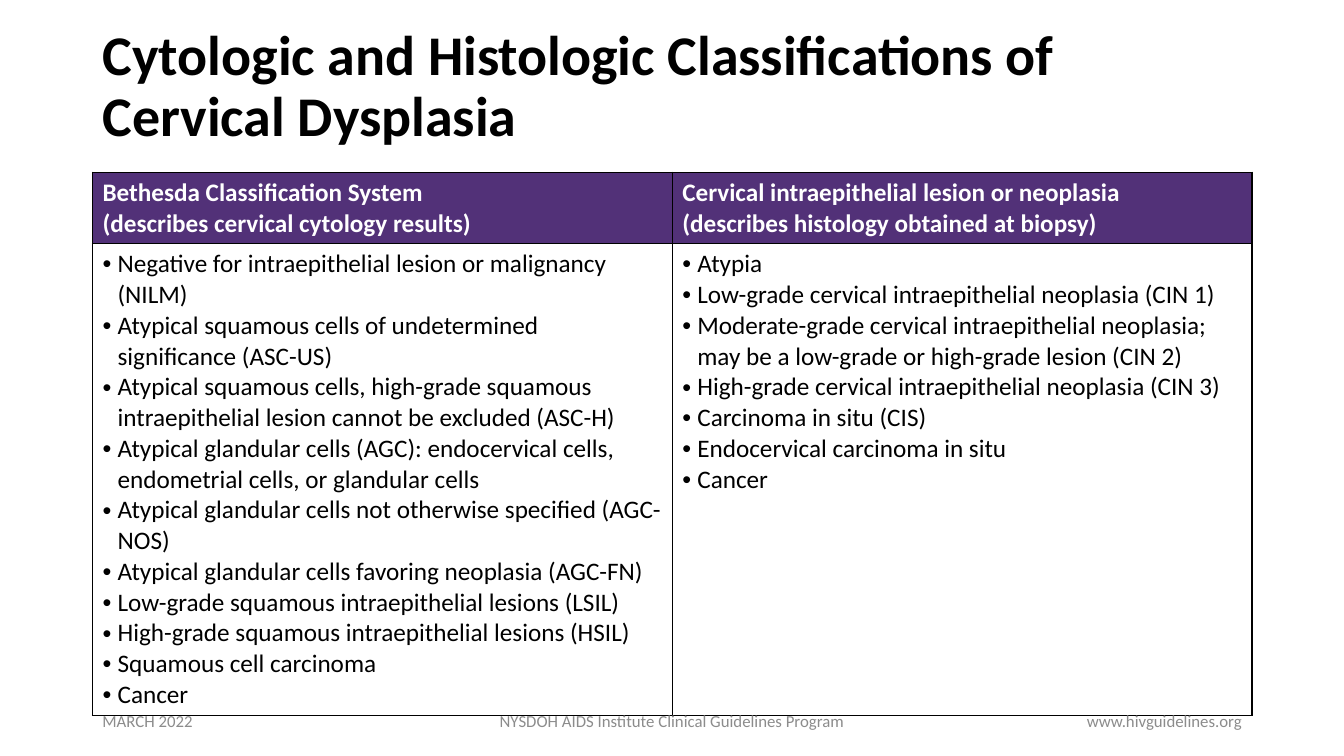
import pptx
import pptx.util
import pptx.dml.color
import pptx.enum.text
import pptx.oxml.ns
from lxml import etree

Cm, Pt = pptx.util.Cm, pptx.util.Pt
RGBColor = pptx.dml.color.RGBColor
ALIGN = pptx.enum.text.PP_ALIGN
MIDDLE = pptx.enum.text.MSO_ANCHOR.MIDDLE

FONT = "Calibri"
BLACK = RGBColor(0, 0, 0)
WHITE = RGBColor(255, 255, 255)
PURPLE = RGBColor(0x52, 0x31, 0x78)
GREY = RGBColor(0x8C, 0x8C, 0x8C)
LEFT = Cm(2.33)

TITLE = "Cytologic and Histologic Classifications of Cervical Dysplasia"
COLUMNS = [
    (["Bethesda Classification System",
      "(describes cervical cytology results)"],
     ["Negative for intraepithelial lesion or malignancy (NILM)",
      "Atypical squamous cells of undetermined significance (ASC-US)",
      "Atypical squamous cells, high-grade squamous intraepithelial lesion "
      "cannot be excluded (ASC-H)",
      "Atypical glandular cells (AGC): endocervical cells, endometrial cells, "
      "or glandular cells",
      "Atypical glandular cells not otherwise specified (AGC-NOS)",
      "Atypical glandular cells favoring neoplasia (AGC-FN)",
      "Low-grade squamous intraepithelial lesions (LSIL)",
      "High-grade squamous intraepithelial lesions (HSIL)",
      "Squamous cell carcinoma",
      "Cancer"]),
    (["Cervical intraepithelial lesion or neoplasia",
      "(describes histology obtained at biopsy)"],
     ["Atypia",
      "Low-grade cervical intraepithelial neoplasia (CIN 1)",
      "Moderate-grade cervical intraepithelial neoplasia; may be a low-grade "
      "or high-grade lesion (CIN 2)",
      "High-grade cervical intraepithelial neoplasia (CIN 3)",
      "Carcinoma in situ (CIS)",
      "Endocervical carcinoma in situ",
      "Cancer"]),
]
# Text, left, width, alignment
FOOTERS = [
    ("NYSDOH AIDS Institute Clinical Guidelines Program",
     Cm(11.22), Cm(11.43), ALIGN.CENTER),
    ("www.hivguidelines.org", Cm(23.93), Cm(7.62), ALIGN.RIGHT),
    ("MARCH 2022", LEFT, Cm(7.62), ALIGN.LEFT),
]


def add_run(para, text, size, color, bold=False):
    run = para.add_run()
    run.text = text
    font = run.font
    font.name, font.size, font.bold = FONT, Pt(size), bold
    font.color.rgb = color


def add_tag(parent, tag, **attrs):
    return etree.SubElement(parent, pptx.oxml.ns.qn(tag), attrs)


def add_bullet(para):
    props = para._p.get_or_add_pPr()
    props.set("marL", str(Cm(0.38)))
    props.set("indent", str(-Cm(0.38)))
    add_tag(props, "a:buFont", typeface="Arial")
    add_tag(props, "a:buChar", char="•")


def add_border(cell):
    props = cell._tc.get_or_add_tcPr()
    for side in ("a:lnL", "a:lnR", "a:lnT", "a:lnB"):
        line = add_tag(props, side, w=str(Pt(1)))
        fill = add_tag(line, "a:solidFill")
        add_tag(fill, "a:srgbClr", val=str(BLACK))


def fill_head(cell, lines):
    add_border(cell)
    cell.fill.solid()
    cell.fill.fore_color.rgb = PURPLE
    para = cell.text_frame.paragraphs[0]
    for i, line in enumerate(lines):
        if i:
            para.add_line_break()
        add_run(para, line, 18, WHITE, True)


def fill_list(cell, items):
    add_border(cell)
    cell.fill.background()
    frame = cell.text_frame
    for i, item in enumerate(items):
        para = frame.add_paragraph() if i else frame.paragraphs[0]
        add_bullet(para)
        add_run(para, item, 18, BLACK)


def set_title(slide):
    title = slide.shapes.title
    title.left, title.top = LEFT, Cm(0.38)
    title.width, title.height = Cm(27), Cm(3.68)
    frame = title.text_frame
    frame.word_wrap = True
    frame.auto_size = pptx.enum.text.MSO_AUTO_SIZE.NONE
    frame.vertical_anchor = MIDDLE
    para = frame.paragraphs[0]
    para.alignment = ALIGN.LEFT
    para.line_spacing = 0.9
    add_run(para, TITLE, 40, BLACK, True)


def add_grid(slide):
    frame = slide.shapes.add_table(2, len(COLUMNS), LEFT, Cm(4.34),
                                   Cm(29.22), Cm(13.46))
    table = frame.table
    table.horz_banding = False
    table.rows[0].height, table.rows[1].height = Cm(1.8), Cm(11.66)
    for i, (head, items) in enumerate(COLUMNS):
        table.columns[i].width = Cm(14.61)
        fill_head(table.cell(0, i), head)
        fill_list(table.cell(1, i), items)


def add_footer(slide, text, left, width, align):
    box = slide.shapes.add_textbox(left, Cm(17.65), width, Cm(1.02))
    frame = box.text_frame
    frame.word_wrap = True
    frame.vertical_anchor = MIDDLE
    para = frame.paragraphs[0]
    para.alignment = align
    add_run(para, text, 12, GREY)


def main():
    deck = pptx.Presentation()
    deck.slide_width, deck.slide_height = Cm(33.87), Cm(19.05)
    # Title Only layout
    slide = deck.slides.add_slide(deck.slide_layouts[5])
    set_title(slide)
    add_grid(slide)
    for footer in FOOTERS:
        add_footer(slide, *footer)
    deck.save("out.pptx")


if __name__ == "__main__":
    main()
